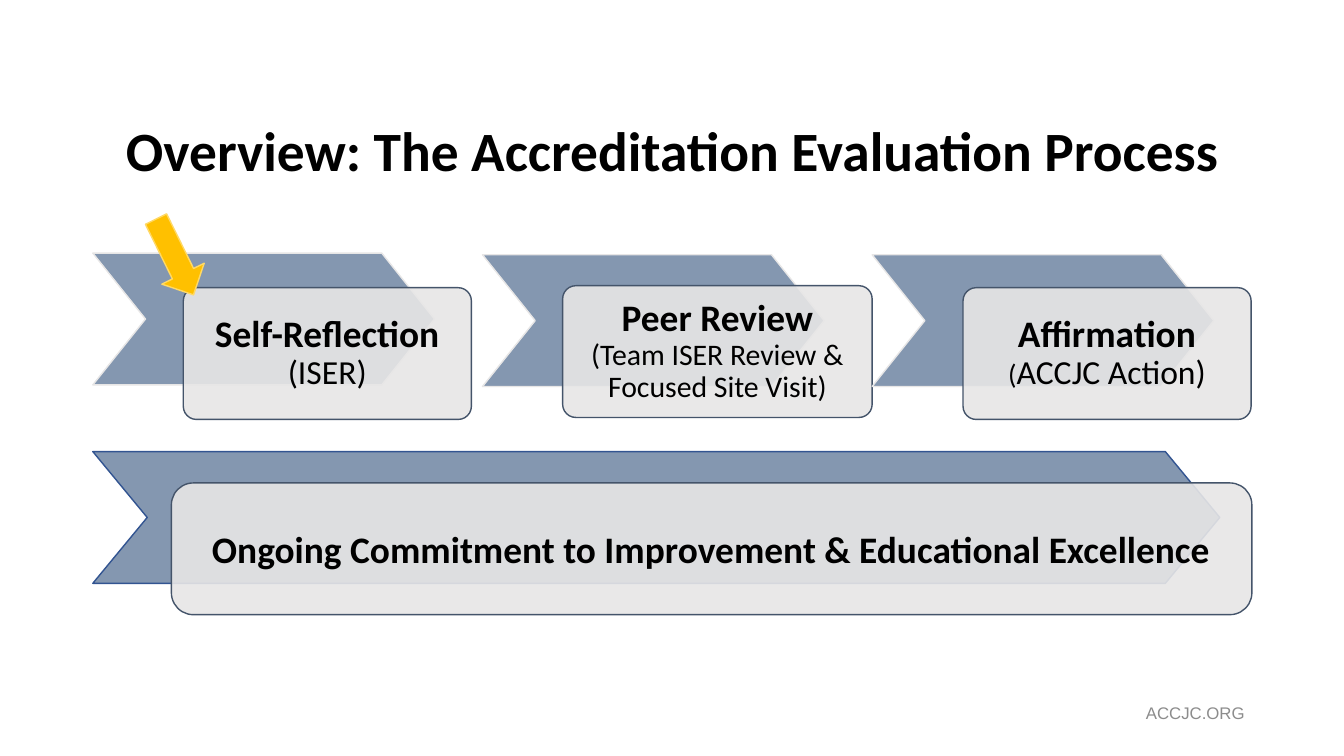
from lxml import etree
from pptx import Presentation
from pptx.dml.color import RGBColor
from pptx.enum.shapes import MSO_SHAPE
from pptx.enum.text import MSO_ANCHOR, PP_ALIGN
from pptx.oxml.ns import qn
from pptx.util import Cm, Pt

CHEVRON = MSO_SHAPE.CHEVRON
ROUNDED = MSO_SHAPE.ROUNDED_RECTANGLE
DOWN_ARROW = MSO_SHAPE.DOWN_ARROW
MIDDLE = MSO_ANCHOR.MIDDLE
CENTER = PP_ALIGN.CENTER
RIGHT = PP_ALIGN.RIGHT

BLACK, BLUE, GREY, SLATE = "000000", "8497B0", "E7E6E6", "44546A"
LEFT = 2.34
STEP_PITCH = 9.82
BAND_HEIGHT = 3.32

# Chevron top, box left, box top, box width, then lines of (text, size, bold) spans
STEPS = [
    (6.38, 4.62, 7.25, 7.26,
     [[("Self-Reflection", 26.7, True)], [("(ISER)", 24, False)]]),
    (6.42, 14.18, 7.2, 7.8,
     [[("Peer Review", 26.7, True)],
      [("(Team ISER Review & Focused Site Visit)", 21.3, False)]]),
    (6.42, 24.27, 7.25, 7.26,
     [[("Affirmation", 26.7, True)],
      [("(", 20, False), ("ACCJC Action)", 24, False)]]),
]


def color(value):
    return RGBColor.from_string(value)


def add_figure(page, kind, place, fill, line, adjust=None, opacity=None):
    figure = page.shapes.add_shape(kind, *map(Cm, place))
    figure.shadow.inherit = False
    figure.fill.solid()
    figure.fill.fore_color.rgb = color(fill)
    figure.line.color.rgb = color(line)
    figure.line.width = Pt(1)
    if adjust is not None:
        figure.adjustments[0] = adjust
    if opacity is not None:
        tint = figure.fill._xPr.find(qn("a:solidFill"))[0]
        etree.SubElement(tint, qn("a:alpha"), val=str(opacity * 1000))
    return figure


def write_lines(box, lines, align=CENTER, inset=0.25, spacing=1.0,
                font="Calibri", ink=BLACK):
    frame = box.text_frame
    frame.word_wrap = True
    frame.vertical_anchor = MIDDLE
    frame.margin_left = frame.margin_right = Cm(inset)
    frame.margin_top = frame.margin_bottom = Cm(inset / 2)
    para = frame.paragraphs[0]
    para.alignment = align
    para.line_spacing = spacing
    for number, line in enumerate(lines):
        if number:
            para.add_line_break()
        for text, size, bold in line:
            span = para.add_run()
            span.text = text
            span.font.name = font
            span.font.size = Pt(size)
            span.font.bold = bold
            span.font.color.rgb = color(ink)


def add_text(page, place, lines, **style):
    box = page.shapes.add_textbox(*map(Cm, place))
    write_lines(box, lines, **style)


def main():
    deck = Presentation()
    deck.slide_width, deck.slide_height = Cm(33.87), Cm(19.05)
    page = deck.slides.add_slide(deck.slide_layouts[6])

    # Footer and title
    add_text(page, (26.95, 17.65, 4.6, 0.64), [[("ACCJC.ORG", 12, False)]],
             align=RIGHT, inset=0.18, font="Arial", ink="8C8C8C")
    add_text(page, (LEFT, 3.05, 29.21, 1.65),
             [[("Overview: The Accreditation Evaluation Process", 39.6, True)]],
             spacing=0.9)

    # Three process steps
    for number, (top, box_left, box_top, width, lines) in enumerate(STEPS):
        add_figure(page, CHEVRON,
                   (LEFT + number * STEP_PITCH, top, 8.61, BAND_HEIGHT),
                   BLUE, GREY, adjust=0.4)
        box = add_figure(page, ROUNDED, (box_left, box_top, width, BAND_HEIGHT),
                         GREY, SLATE, adjust=0.1, opacity=90)
        write_lines(box, lines, inset=0.53, spacing=0.9)

    # Ongoing commitment band
    add_figure(page, CHEVRON, (LEFT, 11.38, 28.4, BAND_HEIGHT),
               BLUE, "325491", adjust=0.413)
    band = add_figure(page, ROUNDED, (4.32, 12.17, 27.23, BAND_HEIGHT),
                      GREY, SLATE, opacity=90)
    write_lines(band, [[("Ongoing Commitment to Improvement & Educational Excellence",
                         26.7, True)]])

    # Pointer to the first step
    pointer = add_figure(page, DOWN_ARROW, (3.81, 5.41, 1.19, 2.13),
                         "FFC000", "FFD966")
    pointer.rotation = 333.7

    deck.save("out.pptx")


if __name__ == "__main__":
    main()
